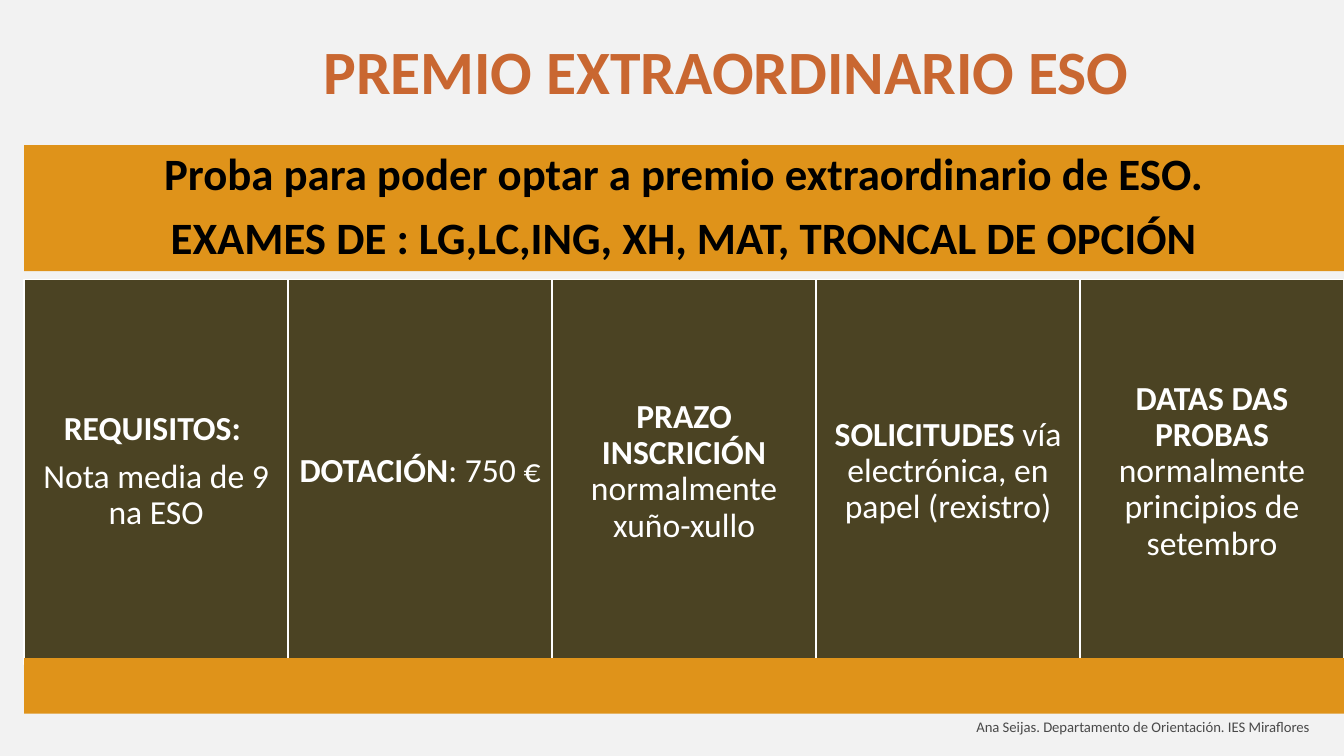
import pptx
import pptx.util
import pptx.dml.color
import pptx.enum.shapes
import pptx.enum.text
from dataclasses import dataclass


@dataclass(frozen=True)
class Theme:
    font: str = "Calibri"
    background: str = "F2F2F2"
    band: str = "DF931A"
    card: str = "4B4323"
    title: str = "C96731"
    light: str = "FFFFFF"
    dark: str = "000000"
    muted: str = "494949"
    title_size: float = 44
    band_size: float = 32
    card_size: float = 24
    footer_size: float = 10.5


theme = Theme()
rgb = pptx.dml.color.RGBColor.from_string
inch = pptx.util.Inches
align = pptx.enum.text.PP_ALIGN
anchor = pptx.enum.text.MSO_ANCHOR


def write(tf, paragraphs, size, color, alignment=align.CENTER, spaced=True):
    """Fill a frame; each paragraph is a list of (text, bold) runs."""
    tf.word_wrap = True
    for i, runs in enumerate(paragraphs):
        p = tf.add_paragraph() if i else tf.paragraphs[0]
        p.alignment = alignment
        p.font.name, p.font.size = theme.font, pptx.util.Pt(size)
        p.font.color.rgb = rgb(color)
        if spaced:
            p.line_spacing = 0.9
            p.space_after = pptx.util.Pt(0.35 * size)
        for text, bold in runs:
            r = p.add_run()
            r.text, r.font.bold = text, bold


def add_block(left, top, width, height, fill, inset=0.1):
    """Add a flat rectangle with vertically centred text."""
    sp = slide.shapes.add_shape(pptx.enum.shapes.MSO_SHAPE.RECTANGLE,
                                inch(left), inch(top), inch(width), inch(height))
    sp.shadow.inherit = False
    sp.fill.solid()
    sp.fill.fore_color.rgb = rgb(fill)
    sp.line.fill.background()
    tf = sp.text_frame
    tf.vertical_anchor = anchor.MIDDLE
    tf.margin_left = tf.margin_right = tf.margin_top = tf.margin_bottom = inch(inset)
    return sp


# Slide and grid
W, H = 13.33, 7.5
LEFT = 0.24
GRID_W = W - LEFT

prs = pptx.Presentation()
prs.slide_width, prs.slide_height = inch(W), inch(H)
slide = prs.slides.add_slide(prs.slide_layouts[5])
slide.background.fill.solid()
slide.background.fill.fore_color.rgb = rgb(theme.background)

# Title
title = slide.shapes.title
title.left, title.top, title.width, title.height = map(inch, (1.08, 0.28, W - 1.08, 0.84))
tf = title.text_frame
tf.auto_size = pptx.enum.text.MSO_AUTO_SIZE.NONE
tf.vertical_anchor = anchor.TOP
write(tf, [[("PREMIO EXTRAORDINARIO ESO", True)]],
      theme.title_size, theme.title, spaced=False)

# Heading band
heading = add_block(LEFT, 1.44, GRID_W, 1.25, theme.band, inset=0.13)
write(heading.text_frame,
      [[("Proba para poder optar a premio extraordinario de ESO.", True)],
       [("EXAMES DE : LG,LC,ING, XH, MAT, TRONCAL DE OPCIÓN", True)]],
      theme.band_size, theme.dark)

# Row of cards
cards = [
    [[("REQUISITOS: ", True)], [("Nota media de 9 na ESO", False)]],
    [[("DOTACIÓN", True), (": 750 €", False)]],
    [[("PRAZO INSCRICIÓN ", True), ("normalmente xuño-xullo", False)]],
    [[("SOLICITUDES", True), (" vía electrónica, en papel (rexistro)", False)]],
    [[("DATAS DAS PROBAS ", True), ("normalmente principios de setembro", False)]],
]
col_w = GRID_W / len(cards)
for i, paragraphs in enumerate(cards):
    card = add_block(LEFT + i * col_w, 2.77, col_w, 3.82, theme.card)
    card.line.color.rgb = rgb(theme.light)
    card.line.width = pptx.util.Pt(1)
    write(card.text_frame, paragraphs, theme.card_size, theme.light)

# Closing band
add_block(LEFT, 6.53, GRID_W, 0.55, theme.band)

# Footer
footer = slide.shapes.add_textbox(inch(4.76), inch(6.92), inch(8.33), inch(0.58))
footer.text_frame.vertical_anchor = anchor.MIDDLE
write(footer.text_frame,
      [[("Ana Seijas. Departamento de Orientación. IES Miraflores", False)]],
      theme.footer_size, theme.muted, align.RIGHT, spaced=False)

prs.save("out.pptx")
